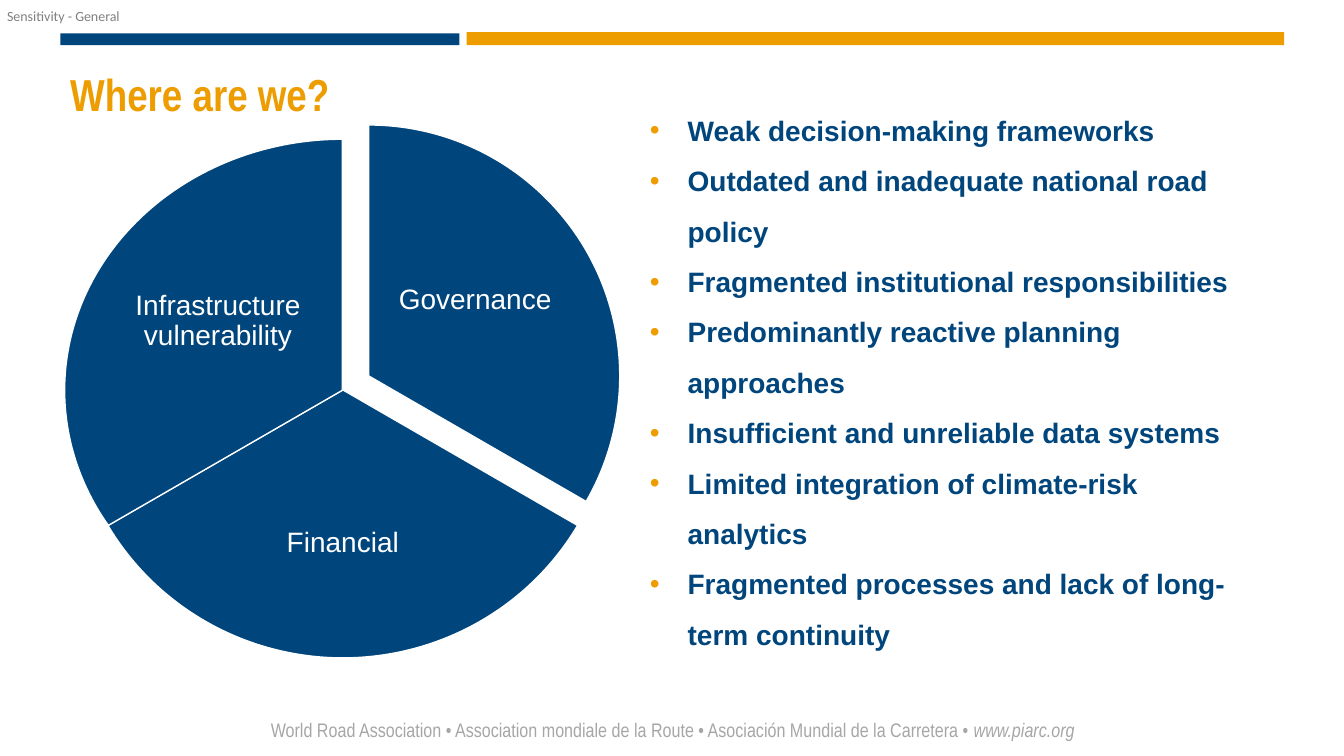
from dataclasses import dataclass

from lxml import etree
from pptx import Presentation
from pptx import util as u
from pptx.dml.color import RGBColor
from pptx.enum import shapes, text
from pptx.oxml import ns

BLUE, GOLD, WHITE, GREY = "00457C", "ED9D00", "FFFFFF", "A6A6A6"


@dataclass(frozen=True)
class Box:
    left: float
    top: float
    width: float
    height: float

    def lengths(self) -> list[u.Cm]:
        return [u.Cm(v) for v in (self.left, self.top, self.width, self.height)]


@dataclass(frozen=True)
class Style:
    size: int
    font: str
    color: str
    bold: bool = False
    italic: bool = False


@dataclass(frozen=True)
class Bar:
    box: Box
    color: str


@dataclass(frozen=True)
class Slice:
    label: str
    start: int
    end: int
    box: Box
    label_box: Box


BARS = [
    Bar(Box(1.52, 0.84, 10.06, 0.3), BLUE),
    Bar(Box(11.76, 0.81, 20.6, 0.33), GOLD),
]
SLICES = [
    Slice("Governance", 270, 30, Box(2.97, 3.15, 12.65, 12.65), Box(9.83, 5.46, 4.29, 4.22)),
    Slice("Financial", 30, 150, Box(1.78, 3.07, 13.72, 13.51), Box(5.54, 11.61, 6.2, 4.19)),
    Slice("Infrastructure vulnerability", 150, 270, Box(1.63, 3.51, 14, 12.65), Box(3.12, 5.99, 4.75, 4.22)),
]
ISSUES = [
    "Weak decision-making frameworks",
    "Outdated and inadequate national road policy",
    "Fragmented institutional responsibilities",
    "Predominantly reactive planning approaches",
    "Insufficient and unreliable data systems",
    "Limited integration of climate-risk analytics",
    "Fragmented processes and lack of long-term continuity",
]


def rgb(value: str) -> RGBColor:
    return RGBColor.from_string(value)


def add_run(p, words: str, style: Style):
    r = p.add_run()
    r.text = words
    r.font.size = u.Pt(style.size)
    r.font.name = style.font
    r.font.bold = style.bold
    r.font.italic = style.italic
    r.font.color.rgb = rgb(style.color)
    return r


def add_box(parent, box: Box, inset: float | None = None, wrap: bool = True):
    tf = parent.add_textbox(*box.lengths()).text_frame
    tf.word_wrap = wrap
    if inset is not None:
        tf.margin_left = tf.margin_right = u.Cm(inset)
        tf.margin_top = tf.margin_bottom = u.Cm(inset)
    return tf


def add_filled(parent, kind, box: Box, color: str):
    sp = parent.add_shape(kind, *box.lengths())
    sp.shadow.inherit = False
    sp.fill.solid()
    sp.fill.fore_color.rgb = rgb(color)
    sp.line.fill.background()
    return sp


def add_slice(parent, item: Slice) -> None:
    sp = add_filled(parent, shapes.MSO_SHAPE.PIE, item.box, BLUE)
    sp.line.color.rgb = rgb(WHITE)
    sp.line.width = u.Pt(1)
    for i, angle in enumerate((item.start, item.end)):
        sp.adjustments[i] = angle * 0.6
    tf = add_box(parent, item.label_box, 0.07)
    tf.vertical_anchor = text.MSO_ANCHOR.MIDDLE
    p = tf.paragraphs[0]
    p.alignment = text.PP_ALIGN.CENTER
    p.line_spacing = 0.9
    add_run(p, item.label, Style(20, "Arial", WHITE))


def add_bullet(p, color: str, indent: float) -> None:
    pr = p._p.get_or_add_pPr()
    pr.set("marL", str(u.Cm(indent)))
    pr.set("indent", str(-u.Cm(indent)))
    clr = etree.SubElement(pr, ns.qn("a:buClr"))
    etree.SubElement(clr, ns.qn("a:srgbClr"), val=color)
    etree.SubElement(pr, ns.qn("a:buFont"), typeface="Arial")
    etree.SubElement(pr, ns.qn("a:buChar"), char="•")


def add_issues(s) -> None:
    tf = add_box(s.shapes, Box(16.13, 2.31, 15.95, 14.2))
    for i, issue in enumerate(ISSUES):
        p = tf.add_paragraph() if i else tf.paragraphs[0]
        add_bullet(p, GOLD, 0.95)
        p.line_spacing = 1.5
        add_run(p, issue, Style(20, "Arial", BLUE, bold=True))


def add_footer(s) -> None:
    p = add_box(s.shapes, Box(1.55, 17.96, 30.81, 0.86)).paragraphs[0]
    p.alignment = text.PP_ALIGN.CENTER
    add_run(
        p,
        "World Road Association • Association mondiale de la Route • Asociación Mundial de la Carretera • ",
        Style(14, "Arial Narrow", GREY),
    )
    add_run(p, "www.piarc.org", Style(14, "Arial Narrow", GREY, italic=True))


def add_sensitivity(s) -> None:
    tf = add_box(s.shapes, Box(0.18, 0.18, 2.92, 0.43), 0, wrap=False)
    r = add_run(tf.paragraphs[0], "Sensitivity - General", Style(10, "Calibri", "000000"))
    clr = r._r.find(".//" + ns.qn("a:srgbClr"))
    etree.SubElement(clr, ns.qn("a:alpha"), val="50000")


def add_title(s) -> None:
    tf = add_box(s.shapes, Box(1.52, 1.68, 30.84, 1.55))
    tf.vertical_anchor = text.MSO_ANCHOR.MIDDLE
    p = tf.paragraphs[0]
    p.line_spacing = 0.9
    add_run(p, "Where are we?", Style(32, "Arial Narrow", GOLD, bold=True))


def main() -> None:
    prs = Presentation()
    prs.slide_width, prs.slide_height = u.Cm(33.87), u.Cm(19.05)
    s = prs.slides.add_slide(prs.slide_layouts[6])
    for bar in BARS:
        add_filled(s.shapes, shapes.MSO_SHAPE.RECTANGLE, bar.box, bar.color)
    add_footer(s)
    add_sensitivity(s)
    add_title(s)
    pie = s.shapes.add_group_shape().shapes
    for item in SLICES:
        add_slice(pie, item)
    add_issues(s)
    prs.save("out.pptx")


if __name__ == "__main__":
    main()
